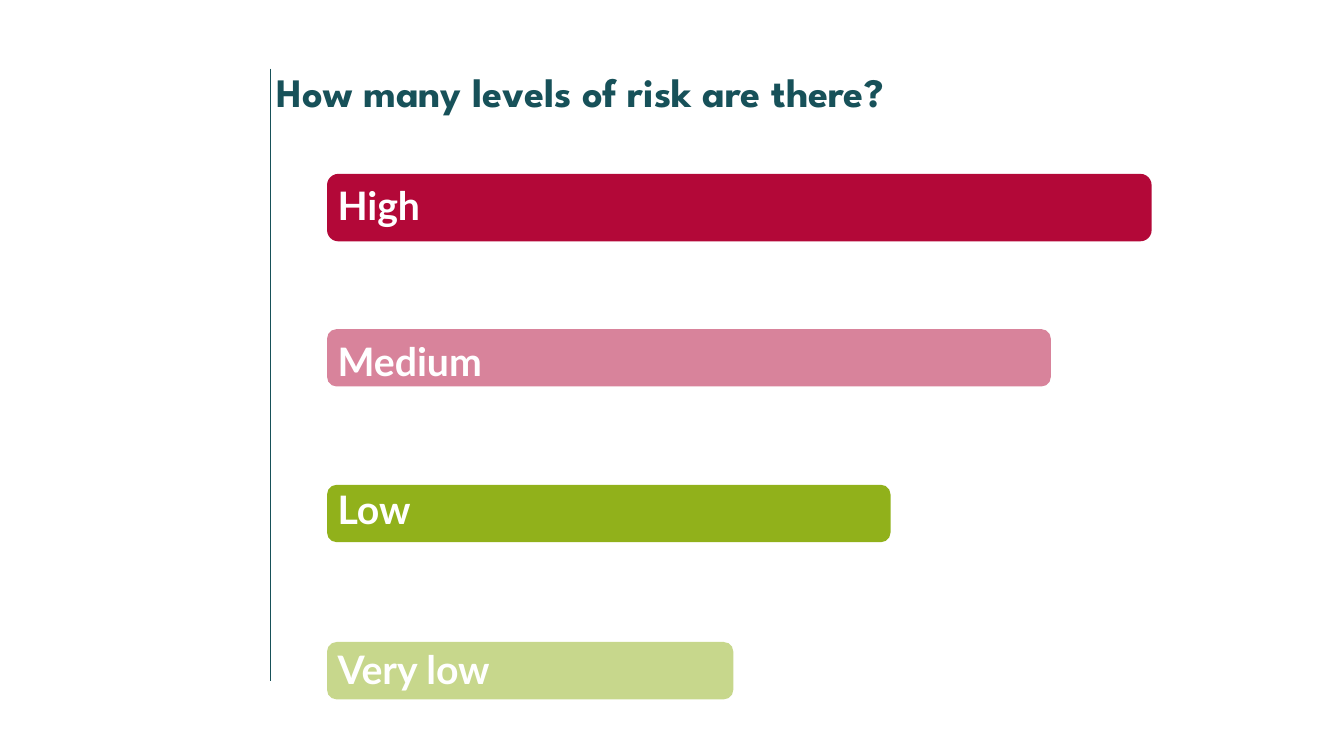
from dataclasses import dataclass

from pptx import Presentation
from pptx import util as u
from pptx.dml.color import RGBColor
from pptx.enum import shapes, text
from pptx.oxml.ns import qn
from lxml import etree

COLOURS = {"teal": "175159", "red": "B30838", "green": "91B11B", "white": "FFFFFF"}
BAR_LEFT = 233.6
LABEL_LEFT, LABEL_WIDTH, LABEL_HEIGHT = 234, 308.9, 41


@dataclass
class RiskLevel:
    name: str
    colour: str
    top: float
    width: float
    height: float
    label_top: float
    opacity: int = 100


LEVELS = [
    RiskLevel("High", "red", 124.2, 589, 48.2, 126),
    RiskLevel("Medium", "red", 235.1, 517, 41, 237.6, 50),
    RiskLevel("Low", "green", 346.3, 402.5, 41, 343.4),
    RiskLevel("Very low", "green", 458.6, 290.2, 41, 457.2, 50),
]


def colour(name: str) -> RGBColor:
    return RGBColor.from_string(COLOURS[name])


def add_bar(page, level: RiskLevel) -> None:
    bar = page.shapes.add_shape(
        shapes.MSO_SHAPE.FLOWCHART_ALTERNATE_PROCESS,
        u.Pt(BAR_LEFT), u.Pt(level.top), u.Pt(level.width), u.Pt(level.height))
    bar.shadow.inherit = False
    bar.line.fill.background()
    bar.fill.solid()
    bar.fill.fore_color.rgb = colour(level.colour)
    if level.opacity < 100:
        tint = bar._element.spPr.find(qn("a:solidFill"))[0]
        etree.SubElement(tint, qn("a:alpha"), val=str(level.opacity * 1000))


def add_text(page, words: str, left: float, top: float, width: float, height: float,
             font: str, size: float, ink: str) -> None:
    box = page.shapes.add_textbox(u.Pt(left), u.Pt(top), u.Pt(width), u.Pt(height))
    frame = box.text_frame
    frame.word_wrap = True
    frame.vertical_anchor = text.MSO_ANCHOR.TOP
    para = frame.paragraphs[0]
    para.text = words
    para.font.name = font
    para.font.size = u.Pt(size)
    para.font.bold = True
    para.font.color.rgb = colour(ink)


def main() -> None:
    deck = Presentation()
    deck.slide_width, deck.slide_height = u.Pt(960), u.Pt(540)
    page = deck.slides.add_slide(deck.slide_layouts[6])

    # Vertical rule
    rule = page.shapes.add_connector(
        shapes.MSO_CONNECTOR.STRAIGHT, u.Pt(193), u.Pt(49), u.Pt(193), u.Pt(486.7))
    rule.line.color.rgb = colour("teal")
    rule.line.width = u.Pt(0.5)
    etree.SubElement(rule._element.spPr, qn("a:effectLst"))

    # Title
    add_text(page, "How many levels of risk are there?", 190.8, 44.6, 725, 29.5,
             "League Spartan", 28.8, "teal")

    # Risk bars with their labels
    for level in LEVELS:
        add_bar(page, level)
        add_text(page, level.name, LABEL_LEFT, level.label_top, LABEL_WIDTH, LABEL_HEIGHT,
                 "Lato", 28, "white")

    deck.save("out.pptx")


if __name__ == "__main__":
    main()
